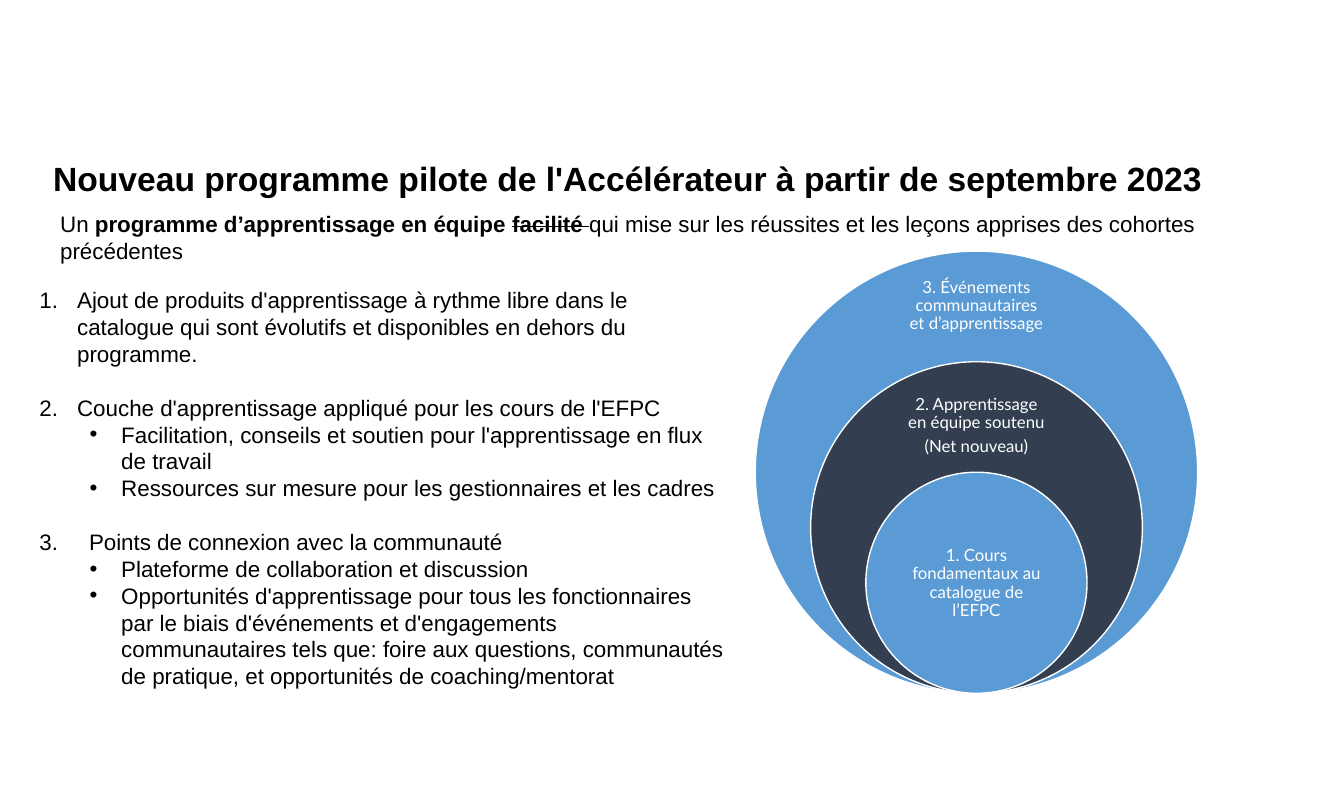
from dataclasses import dataclass

from lxml.etree import SubElement
from pptx import Presentation
from pptx.dml.color import RGBColor as RGB
from pptx.enum.shapes import MSO_SHAPE as Preset
from pptx.enum.text import MSO_ANCHOR as Anchor, MSO_AUTO_SIZE as AutoSize, PP_ALIGN as Align
from pptx.oxml.ns import qn
from pptx.util import Pt


@dataclass(frozen=True)
class Theme:
    """Colours, fonts and type sizes of the slide."""
    ink: RGB = RGB(0, 0, 0)
    white: RGB = RGB(0xFF, 0xFF, 0xFF)
    blue: RGB = RGB(0x5B, 0x9B, 0xD5)
    navy: RGB = RGB(0x33, 0x3F, 0x50)
    text_font: str = "Arial"
    ring_font: str = "Lato"
    title_size: int = 24
    text_size: int = 16
    ring_size: int = 12


class SlideBuilder:
    """Draws each kind of element on the current slide."""

    def __init__(self, slide, theme):
        self.slide, self.theme = slide, theme
        self.text_format = dict(name=theme.text_font, size=Pt(theme.text_size))
        self.ring_format = dict(name=theme.ring_font, size=Pt(theme.ring_size))

    def apply(self, target, values):
        """Set every attribute in a dict of format values."""
        for key, value in values.items():
            setattr(target, key, value)

    def frame(self, shape, box, inset=0, anchor=Anchor.TOP):
        """Place a shape and prepare its text frame."""
        self.apply(shape, dict(zip(("left", "top", "width", "height"), map(Pt, box))))
        sides = ("margin_left", "margin_top", "margin_right", "margin_bottom")
        self.apply(shape.text_frame, dict(dict.fromkeys(sides, Pt(inset)), word_wrap=True,
                                          auto_size=AutoSize.NONE, vertical_anchor=anchor))
        return shape.text_frame

    def text_box(self, box, **options):
        """Add an empty text box and return its frame."""
        return self.frame(self.slide.shapes.add_textbox(0, 0, 0, 0), box, **options)

    def add_text(self, paragraph, text, color, font, **changes):
        """Add one formatted run."""
        run = paragraph.add_run()
        run.text = text
        self.apply(run.font, {**font, **changes})
        run.font.color.rgb = color
        return run

    def title(self, text, box):
        """Fill the title placeholder."""
        paragraph = self.frame(self.slide.shapes.title, box).paragraphs[0]
        paragraph.alignment = Align.LEFT
        self.add_text(paragraph, text, self.theme.ink, self.text_format,
                      size=Pt(self.theme.title_size), bold=True)

    def lead(self, parts, box):
        """Add the opening sentence from text, bold and strike parts."""
        paragraph = self.text_box(box).paragraphs[0]
        for text, bold, struck in parts:
            run = self.add_text(paragraph, text, self.theme.ink, self.text_format, bold=bold)
            if struck:
                run._r.get_or_add_rPr().set("strike", "sngStrike")

    def outline(self, sections, box, gap):
        """Add numbered headings with bulleted points."""
        frame = self.text_box(box, inset=7.2)
        for number, (heading, indent, points) in enumerate(sections, 1):
            first = number == 1
            paragraph = frame.paragraphs[0] if first else frame.add_paragraph()
            paragraph.space_before = Pt(0 if first else gap)
            self.marker(paragraph, indent, indent, "buAutoNum",
                        type="arabicPeriod", startAt=str(number))
            self.add_text(paragraph, heading, self.theme.ink, self.text_format)
            for point in points:
                paragraph = frame.add_paragraph()
                paragraph.level = 1
                self.marker(paragraph, 58.5, 22.5, "buChar", char="•")
                self.add_text(paragraph, point, self.theme.ink, self.text_format)

    def marker(self, paragraph, margin, hanging, tag, **attributes):
        """Give a paragraph a hanging bullet or number."""
        properties = paragraph._p.get_or_add_pPr()
        properties.set("marL", str(Pt(margin)))
        properties.set("indent", str(-Pt(hanging)))
        SubElement(properties, qn("a:buFont"), typeface=self.theme.text_font)
        SubElement(properties, qn(f"a:{tag}"), **attributes)

    def ring(self, center, bottom, diameter, fill):
        """Add a filled circle standing on the common base."""
        circle = self.slide.shapes.add_shape(
            Preset.OVAL, Pt(center - diameter / 2), Pt(bottom - diameter), Pt(diameter), Pt(diameter))
        circle.shadow.inherit = False
        circle.fill.solid()
        circle.fill.fore_color.rgb = fill
        circle.line.color.rgb = self.theme.white
        circle.line.width = Pt(1)

    def ring_label(self, lines, box):
        """Add the centred label of a circle."""
        frame = self.text_box(box, inset=6.5, anchor=Anchor.MIDDLE)
        for index, line in enumerate(lines):
            paragraph = frame.add_paragraph() if index else frame.paragraphs[0]
            self.apply(paragraph, dict(alignment=Align.CENTER, line_spacing=0.9, space_after=Pt(4.2)))
            self.add_text(paragraph, line, self.theme.white, self.ring_format)


def main():
    """Build and save the slide."""
    deck = Presentation()
    deck.slide_width, deck.slide_height = Pt(960), Pt(576)
    theme = Theme()
    builder = SlideBuilder(deck.slides.add_slide(deck.slide_layouts[5]), theme)

    center, bottom, outer = 697.5, 495.5, 316
    rings = [
        (theme.blue, ["3. Événements communautaires et d’apprentissage"], 195, 47.5),
        (theme.navy, ["2. Apprentissage en équipe soutenu", "(Net nouveau)"], 282, 45),
        (theme.blue, ["1. Cours fondamentaux au catalogue de l’EFPC"], 377.5, 79),
    ]
    for step, (fill, label, top, height) in enumerate(rings):
        builder.ring(center, bottom, outer * (1 - step / 4), fill)
        builder.ring_label(label, (center - 55.5, top, 111, height))

    builder.title("Nouveau programme pilote de l'Accélérateur à partir de septembre 2023",
                  (38, 112.5, 841, 29))
    builder.lead([
        ("Un ", False, False),
        ("programme d’apprentissage en équipe ", True, False),
        ("facilité ", True, True),
        ("qui mise sur les réussites et les leçons apprises des cohortes précédentes", False, False),
    ], (43, 150, 847.5, 39))
    builder.outline([
        ("Ajout de produits d'apprentissage à rythme libre dans le catalogue qui sont évolutifs "
         "et disponibles en dehors du programme.", 27, []),
        ("Couche d'apprentissage appliqué pour les cours de l'EFPC", 27, [
            "Facilitation, conseils et soutien pour l'apprentissage en flux de travail",
            "Ressources sur mesure pour les gestionnaires et les cadres"]),
        ("Points de connexion avec la communauté", 35.5, [
            "Plateforme de collaboration et discussion",
            "Opportunités d'apprentissage pour tous les fonctionnaires par le biais d'événements "
            "et d'engagements communautaires tels que: foire aux questions, communautés de pratique, "
            "et opportunités de coaching/mentorat"]),
    ], (21, 197.5, 503, 337), gap=19.2)
    deck.save("out.pptx")


if __name__ == "__main__":
    main()
